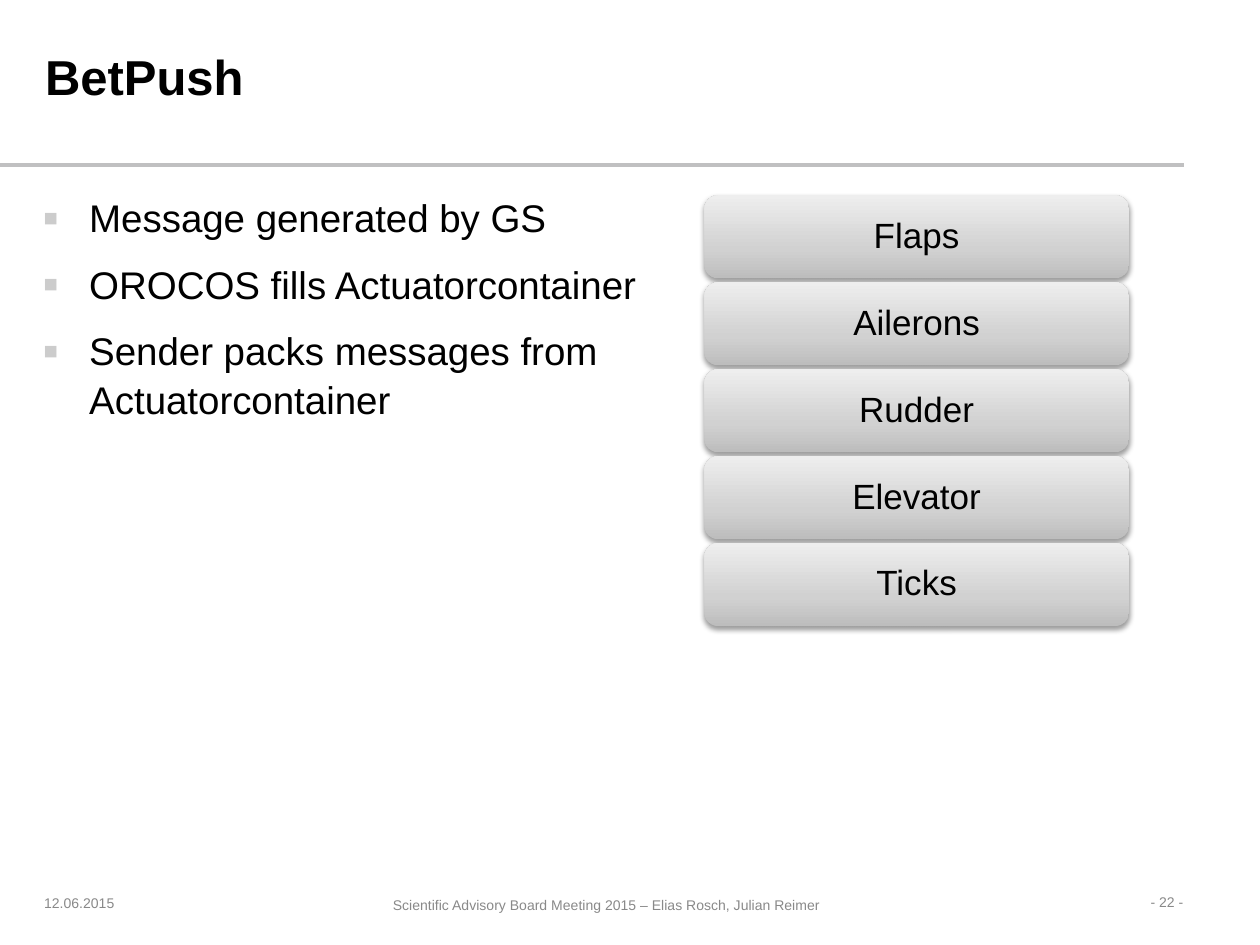
from dataclasses import dataclass

from lxml.etree import SubElement
from pptx import Presentation
from pptx.dml.color import RGBColor
from pptx.enum.shapes import MSO_CONNECTOR, MSO_SHAPE
from pptx.enum.text import MSO_ANCHOR, PP_ALIGN
from pptx.oxml.ns import qn
from pptx.util import Inches, Pt

COLORS = {
    "text": "000000",
    "footer": "898989",
    "rule": "C0C0C1",
    "bullet": "CCCCCC",
    "shadow": "000000",
}
BOX_GRADIENT = [(0, "BDBDBD"), (35, "D1D1D1"), (100, "EEEEEE")]
FONT = "Arial"

BOX_LABELS = ["Flaps", "Ailerons", "Rudder", "Elevator", "Ticks"]
BOX_LEFT, BOX_TOP, BOX_WIDTH, BOX_HEIGHT, BOX_PITCH = 5.59, 1.55, 3.37, 0.66, 0.69

BULLETS = [
    "Message generated by GS",
    "OROCOS fills Actuatorcontainer",
    "Sender packs messages from Actuatorcontainer",
]


@dataclass
class Label:
    text: str
    left: float
    top: float
    width: float
    height: float
    size: float = 8
    color: str = "footer"
    bold: bool = False
    align: PP_ALIGN = PP_ALIGN.LEFT
    anchor: MSO_ANCHOR = MSO_ANCHOR.MIDDLE
    insets: tuple[float, float] = (0, 0)
    line_spacing: float = 1.0


LABELS = [
    Label("12.06.2015", 0.35, 6.94, 0.95, 0.46),
    Label("Scientific Advisory Board Meeting 2015 – Elias Rosch, Julian Reimer",
          1.64, 7.05, 6.35, 0.26, align=PP_ALIGN.CENTER),
    Label("- 22 -", 8.15, 7.04, 1.34, 0.24, align=PP_ALIGN.RIGHT,
          anchor=MSO_ANCHOR.TOP, insets=(0.1, 0.05)),
    Label("BetPush", 0.26, 0.06, 7.91, 1.14, size=28, color="text", bold=True,
          insets=(0.1, 0), line_spacing=0.9),
]


def set_up_frame(text_frame, insets: tuple[float, float], anchor: MSO_ANCHOR) -> None:
    text_frame.word_wrap = True
    text_frame.vertical_anchor = anchor
    text_frame.margin_left = text_frame.margin_right = Inches(insets[0])
    text_frame.margin_top = text_frame.margin_bottom = Inches(insets[1])


def format_runs(paragraph, size: float, color: str, bold: bool = False) -> None:
    for run in paragraph.runs:
        run.font.name = FONT
        run.font.size = Pt(size)
        run.font.bold = bold
        run.font.color.rgb = RGBColor.from_string(COLORS[color])


def add_label(slide, label: Label) -> None:
    shape = slide.shapes.add_textbox(
        Inches(label.left), Inches(label.top), Inches(label.width), Inches(label.height))
    set_up_frame(shape.text_frame, label.insets, label.anchor)
    shape.text_frame.text = label.text
    paragraph = shape.text_frame.paragraphs[0]
    paragraph.alignment = label.align
    paragraph.line_spacing = label.line_spacing
    format_runs(paragraph, label.size, label.color, label.bold)


def add_header_rule(slide) -> None:
    rule = slide.shapes.add_connector(
        MSO_CONNECTOR.STRAIGHT, Inches(0), Inches(1.31), Inches(9.4), Inches(1.31))
    rule.line.color.rgb = RGBColor.from_string(COLORS["rule"])
    rule.line.width = Pt(2.25)
    SubElement(rule._element.spPr, qn("a:effectLst"))


def fill_with_gradient(shape) -> None:
    """Fill from bottom to top with the stops of BOX_GRADIENT."""
    shape.fill.gradient()
    shape.fill.gradient_angle = 90
    stops = shape._element.spPr.find(qn("a:gradFill")).find(qn("a:gsLst"))
    for stop in list(stops):
        stops.remove(stop)
    for position, color in BOX_GRADIENT:
        stop = SubElement(stops, qn("a:gs"), pos=str(position * 1000))
        SubElement(stop, qn("a:srgbClr"), val=color)


def add_drop_shadow(shape) -> None:
    shape.shadow.inherit = False
    effects = shape._element.spPr.find(qn("a:effectLst"))
    shadow = SubElement(effects, qn("a:outerShdw"), blurRad=str(Pt(3.1)),
                        dist=str(Pt(1.6)), dir="5400000", rotWithShape="0")
    color = SubElement(shadow, qn("a:srgbClr"), val=COLORS["shadow"])
    SubElement(color, qn("a:alpha"), val="38000")


def add_box(slide, text: str, top: float) -> None:
    shape = slide.shapes.add_shape(
        MSO_SHAPE.ROUNDED_RECTANGLE,
        Inches(BOX_LEFT), Inches(top), Inches(BOX_WIDTH), Inches(BOX_HEIGHT))
    fill_with_gradient(shape)
    shape.line.fill.background()
    add_drop_shadow(shape)
    set_up_frame(shape.text_frame, (0.08, 0.04), MSO_ANCHOR.MIDDLE)
    shape.text_frame.text = text
    paragraph = shape.text_frame.paragraphs[0]
    paragraph.alignment = PP_ALIGN.CENTER
    paragraph.line_spacing = 0.9
    format_runs(paragraph, 20, "text")


def add_bullet_mark(paragraph) -> None:
    properties = paragraph._p.get_or_add_pPr()
    properties.set("marL", str(Inches(0.57)))
    properties.set("indent", str(Inches(-0.37)))
    color = SubElement(properties, qn("a:buClr"))
    SubElement(color, qn("a:srgbClr"), val=COLORS["bullet"])
    SubElement(properties, qn("a:buSzPct"), val="120000")
    SubElement(properties, qn("a:buFont"), typeface=FONT)
    SubElement(properties, qn("a:buChar"), char="▪")


def add_bullet_list(slide) -> None:
    shape = slide.shapes.add_textbox(Inches(0.04), Inches(1.47), Inches(5.24), Inches(5.43))
    text_frame = shape.text_frame
    set_up_frame(text_frame, (0.1, 0.05), MSO_ANCHOR.TOP)
    text_frame.text = "\n".join(BULLETS)
    for index, paragraph in enumerate(text_frame.paragraphs):
        add_bullet_mark(paragraph)
        paragraph.line_spacing = 1.06
        if index:
            paragraph.space_before = Pt(10)
        format_runs(paragraph, 22, "text")


def main() -> None:
    presentation = Presentation()
    presentation.slide_width = Inches(10)
    presentation.slide_height = Inches(7.5)
    slide = presentation.slides.add_slide(presentation.slide_layouts[6])

    add_header_rule(slide)
    for label in LABELS:
        add_label(slide, label)
    for index, text in enumerate(BOX_LABELS):
        add_box(slide, text, BOX_TOP + index * BOX_PITCH)
    add_bullet_list(slide)

    presentation.save("out.pptx")


if __name__ == "__main__":
    main()
